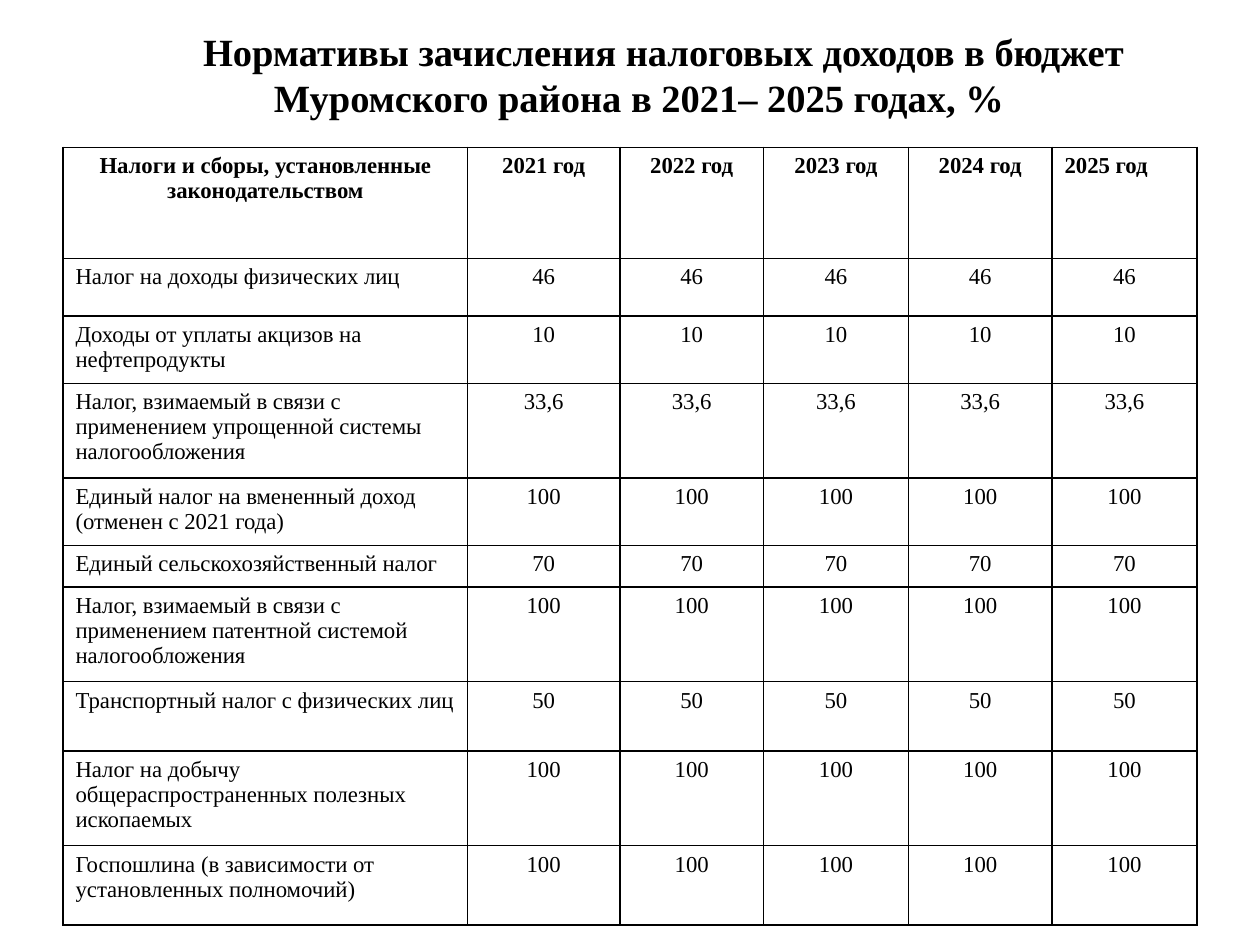
from lxml.etree import SubElement
from pptx import Presentation
from pptx.dml.color import RGBColor
from pptx.enum.text import PP_ALIGN
from pptx.oxml.ns import qn
from pptx.util import Inches, Pt

BLACK = RGBColor(0, 0, 0)
WHITE = RGBColor(255, 255, 255)
YEARS = range(2021, 2026)
COLS = [3.21, 1.21, 1.14, 1.15, 1.14, 1.15]
HEAD = ("Налоги и сборы, установленные законодательством", 0.88)
TAXES = [
    ("Налог на доходы физических лиц", "46", 0.46),
    ("Доходы от уплаты акцизов на нефтепродукты", "10", 0.53),
    ("Налог, взимаемый в связи с применением упрощенной системы налогообложения", "33,6", 0.75),
    ("Единый налог на вмененный доход (отменен с 2021 года)", "100", 0.53),
    ("Единый сельскохозяйственный налог", "70", 0.33),
    ("Налог, взимаемый в связи с применением патентной системой налогообложения", "100", 0.75),
    ("Транспортный налог с физических лиц", "50", 0.55),
    ("Налог на добычу общераспространенных полезных ископаемых", "100", 0.75),
    ("Госпошлина (в зависимости от установленных полномочий)", "100", 0.63),
]


class Deck:
    """Holds the font, the colour and the current slide."""

    def __init__(self, slide, font="Times New Roman", color=BLACK):
        self.slide, self.font, self.color = slide, font, color

    def text(self, para, words, size, bold, align):
        para.alignment = align
        run = para.add_run()
        run.text = words
        font = run.font
        font.name, font.size, font.bold = self.font, Pt(size), bold
        font.color.rgb = self.color

    def title(self, words, left, top, width, height):
        box = self.slide.shapes.add_textbox(
            Inches(left), Inches(top), Inches(width), Inches(height))
        box.text_frame.word_wrap = True
        para = box.text_frame.paragraphs[0]
        para._p.get_or_add_pPr().set("indent", str(Inches(0.39)))
        self.text(para, words, 22, True, PP_ALIGN.CENTER)

    def border(self, cell):
        props = cell._tc.get_or_add_tcPr()
        for index, side in enumerate(("lnL", "lnR", "lnT", "lnB")):
            line = props.makeelement(qn(f"a:{side}"), {"w": str(Pt(1))})
            fill = SubElement(line, qn("a:solidFill"))
            SubElement(fill, qn("a:srgbClr"), val=str(self.color))
            props.insert(index, line)

    def table(self, rows, heights, left, top):
        grid = self.slide.shapes.add_table(
            len(rows), len(COLS), Inches(left), Inches(top),
            Inches(sum(COLS)), Inches(sum(heights))).table
        for col, width in zip(grid.columns, COLS):
            col.width = Inches(width)
        for r, (row, height) in enumerate(zip(rows, heights)):
            grid.rows[r].height = Inches(height)
            for c, words in enumerate(row):
                cell = grid.cell(r, c)
                cell.fill.solid()
                cell.fill.fore_color.rgb = WHITE
                self.border(cell)
                plain = c == 0 if r else c == len(COLS) - 1
                align = PP_ALIGN.LEFT if plain else PP_ALIGN.CENTER
                self.text(cell.text_frame.paragraphs[0], words, 13, r == 0, align)


def main():
    prs = Presentation()
    prs.slide_width, prs.slide_height = Inches(10), Inches(7.5)
    deck = Deck(prs.slides.add_slide(prs.slide_layouts[6]))
    deck.title("Нормативы зачисления налоговых доходов в бюджет "
               "Муромского района в 2021– 2025 годах, %", 0.58, 0.17, 8.98, 1)
    rows = [[HEAD[0]] + [f"{year} год" for year in YEARS]]
    rows += [[name] + [rate] * len(YEARS) for name, rate, _ in TAXES]
    heights = [HEAD[1]] + [tax[2] for tax in TAXES]
    deck.table(rows, heights, 0.5, 1.17)
    prs.save("out.pptx")


if __name__ == "__main__":
    main()
